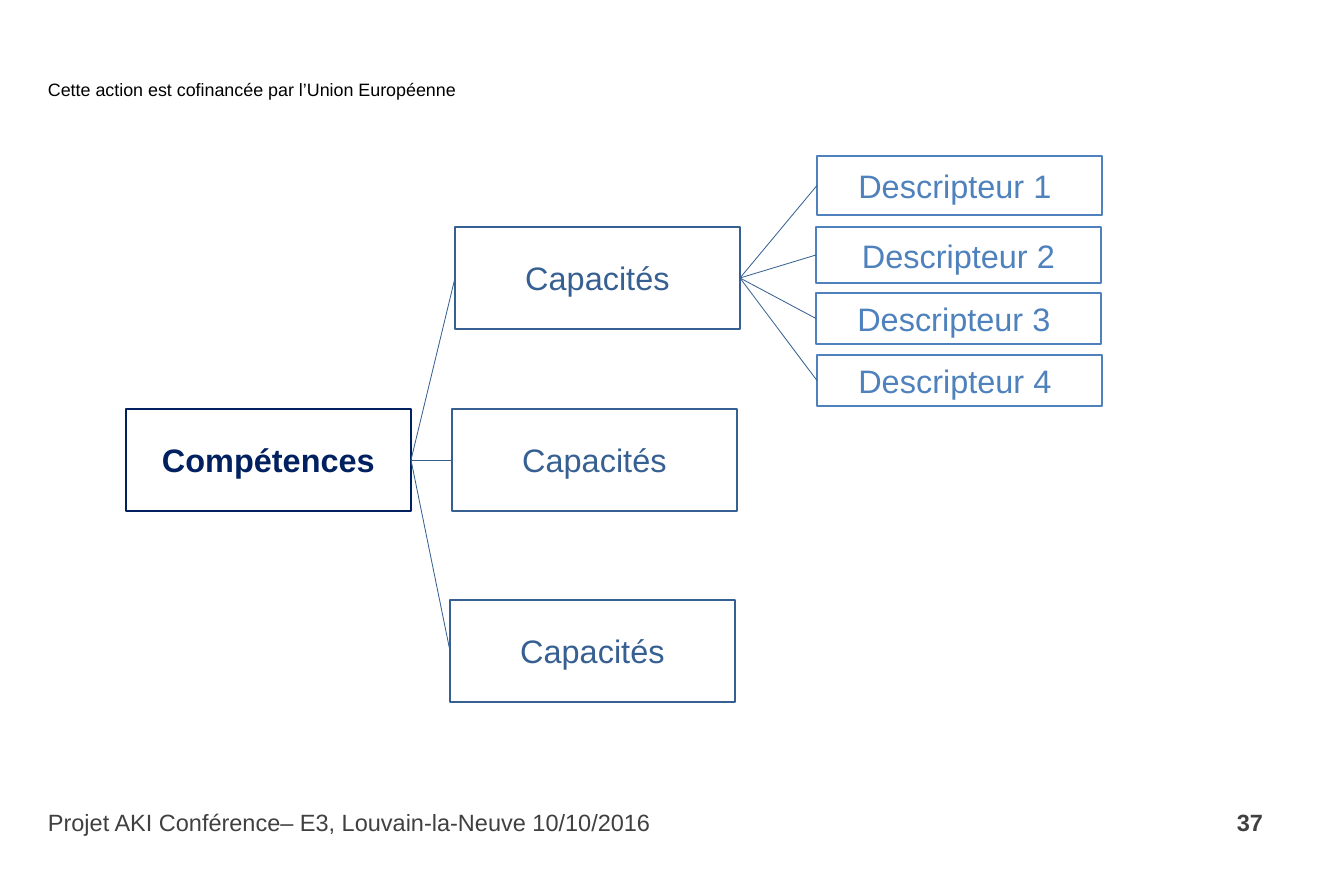
from dataclasses import dataclass

import lxml.etree
import pptx
import pptx.dml.color
import pptx.enum.shapes
import pptx.enum.text
import pptx.oxml.ns
import pptx.shapes.autoshape
import pptx.slide
import pptx.text.text
import pptx.util

RGBColor = pptx.dml.color.RGBColor
Align = pptx.enum.text.PP_ALIGN

EMU_PER_PX = 11345
FONT = "Arial"
BOX_WIDTH = 285
BOX_TEXT_SIZE = 29
FOOTER_SIZE = 21

WHITE = RGBColor(0xFF, 0xFF, 0xFF)
BLACK = RGBColor(0x00, 0x00, 0x00)
GREY = RGBColor(0x40, 0x40, 0x40)
NAVY = RGBColor(0x00, 0x20, 0x60)
BLUE = RGBColor(0x37, 0x60, 0x92)
LIGHT_BLUE = RGBColor(0x4F, 0x81, 0xBD)


@dataclass(frozen=True)
class Box:
    text: str
    left: int
    top: int
    height: int
    color: RGBColor
    bold: bool = False


@dataclass(frozen=True)
class Label:
    text: str
    left: int
    top: int
    width: int
    height: int
    size: int
    color: RGBColor
    bold: bool = False
    align: Align = Align.LEFT
    wrap: bool = True


COMPETENCE = Box("Compétences", 126, 409, 102, NAVY, bold=True)
CAPACITIES = [
    Box("Capacités", left, top, 102, BLUE)
    for left, top in ((455, 227), (452, 409), (450, 600))
]
DESCRIPTORS = [
    Box("Descripteur 1 ", 817, 156, 59, LIGHT_BLUE),
    Box("Descripteur 2", 816, 227, 56, LIGHT_BLUE),
    Box("Descripteur 3 ", 816, 293, 51, LIGHT_BLUE),
    Box("Descripteur 4 ", 817, 355, 51, LIGHT_BLUE),
]
LABELS = [
    Label("Cette action est cofinancée par l’Union Européenne",
          40, 75, 429, 30, 16, BLACK, wrap=False),
    Label("Projet AKI Conférence– E3, Louvain-la-Neuve 10/10/2016",
          40, 804, 878, 76, FOOTER_SIZE, GREY),
    Label("37", 958, 804, 313, 48, FOOTER_SIZE, GREY, bold=True, align=Align.RIGHT),
]


def px(length: int) -> pptx.util.Emu:
    return pptx.util.Emu(length * EMU_PER_PX)


def add_run(p: pptx.text.text._Paragraph, text: str, size: int,
            color: RGBColor, bold: bool) -> None:
    r = p.add_run()
    r.text = text
    r.font.name = FONT
    r.font.size = pptx.util.Pt(size)
    r.font.bold = bold
    r.font.color.rgb = color


def add_box(s: pptx.slide.Slide, box: Box) -> pptx.shapes.autoshape.Shape:
    sp = s.shapes.add_shape(
        pptx.enum.shapes.MSO_SHAPE.RECTANGLE,
        px(box.left), px(box.top), px(BOX_WIDTH), px(box.height),
    )
    sp.shadow.inherit = False
    sp.fill.solid()
    sp.fill.fore_color.rgb = WHITE
    sp.line.color.rgb = box.color
    sp.line.width = pptx.util.Pt(2)
    tf = sp.text_frame
    tf.word_wrap = True
    tf.vertical_anchor = pptx.enum.text.MSO_ANCHOR.MIDDLE
    p = tf.paragraphs[0]
    p.alignment = Align.CENTER
    add_run(p, box.text, BOX_TEXT_SIZE, box.color, box.bold)
    return sp


def add_label(s: pptx.slide.Slide, label: Label) -> None:
    sp = s.shapes.add_textbox(
        px(label.left), px(label.top), px(label.width), px(label.height)
    )
    tf = sp.text_frame
    tf.word_wrap = label.wrap
    p = tf.paragraphs[0]
    p.alignment = label.align
    add_run(p, label.text, label.size, label.color, label.bold)


def add_branches(s: pptx.slide.Slide, parent: pptx.shapes.autoshape.Shape,
                 children: list[pptx.shapes.autoshape.Shape]) -> None:
    for child in children:
        line = s.shapes.add_connector(
            pptx.enum.shapes.MSO_CONNECTOR.STRAIGHT, 0, 0, 0, 0
        )
        line.begin_connect(parent, 3)
        line.end_connect(child, 1)
        line.line.color.rgb = BLUE
        line.line.width = pptx.util.Pt(0.75)
        lxml.etree.SubElement(
            line._element.spPr, pptx.oxml.ns.qn("a:effectLst")
        )


def main() -> None:
    prs = pptx.Presentation()
    prs.slide_width = px(1344)
    prs.slide_height = px(896)
    s = prs.slides.add_slide(prs.slide_layouts[6])

    competence = add_box(s, COMPETENCE)
    capacities = [add_box(s, box) for box in CAPACITIES]
    descriptors = [add_box(s, box) for box in DESCRIPTORS]
    add_branches(s, competence, capacities)
    add_branches(s, capacities[0], descriptors)
    for label in LABELS:
        add_label(s, label)

    prs.save("out.pptx")


if __name__ == "__main__":
    main()
